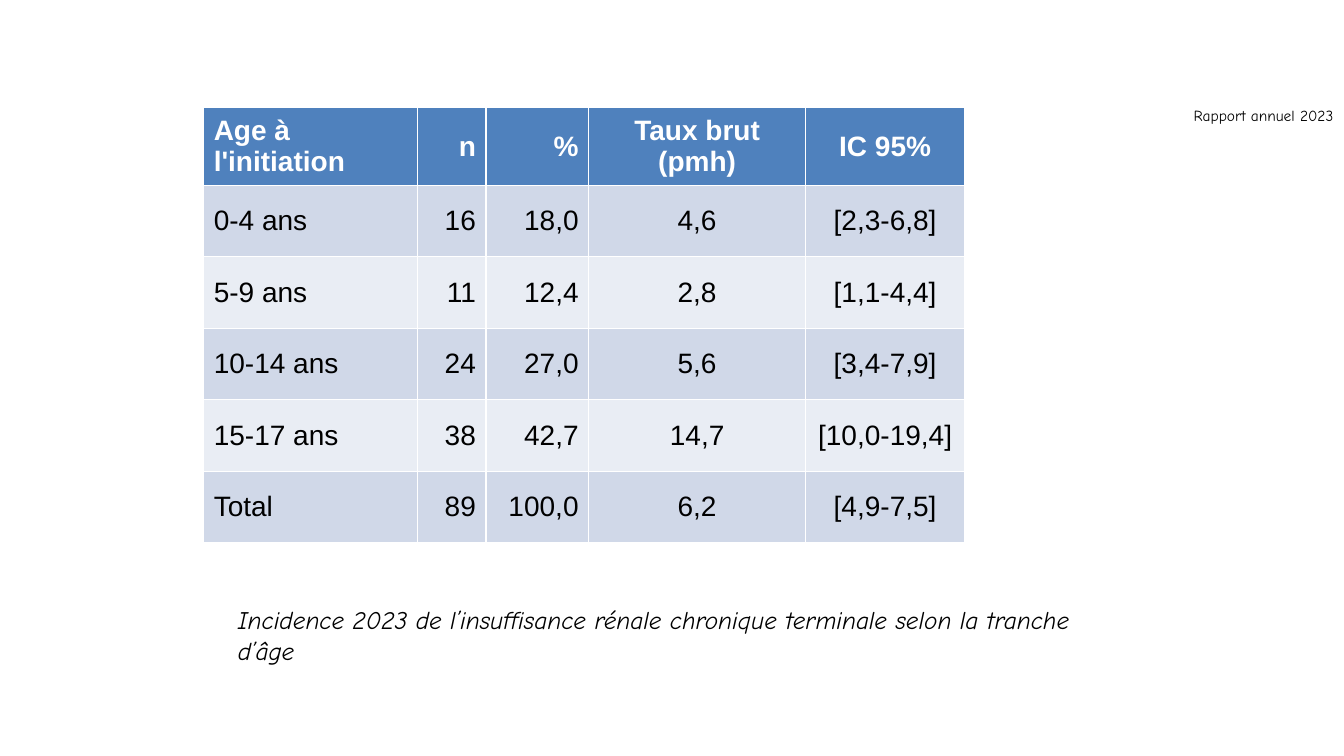
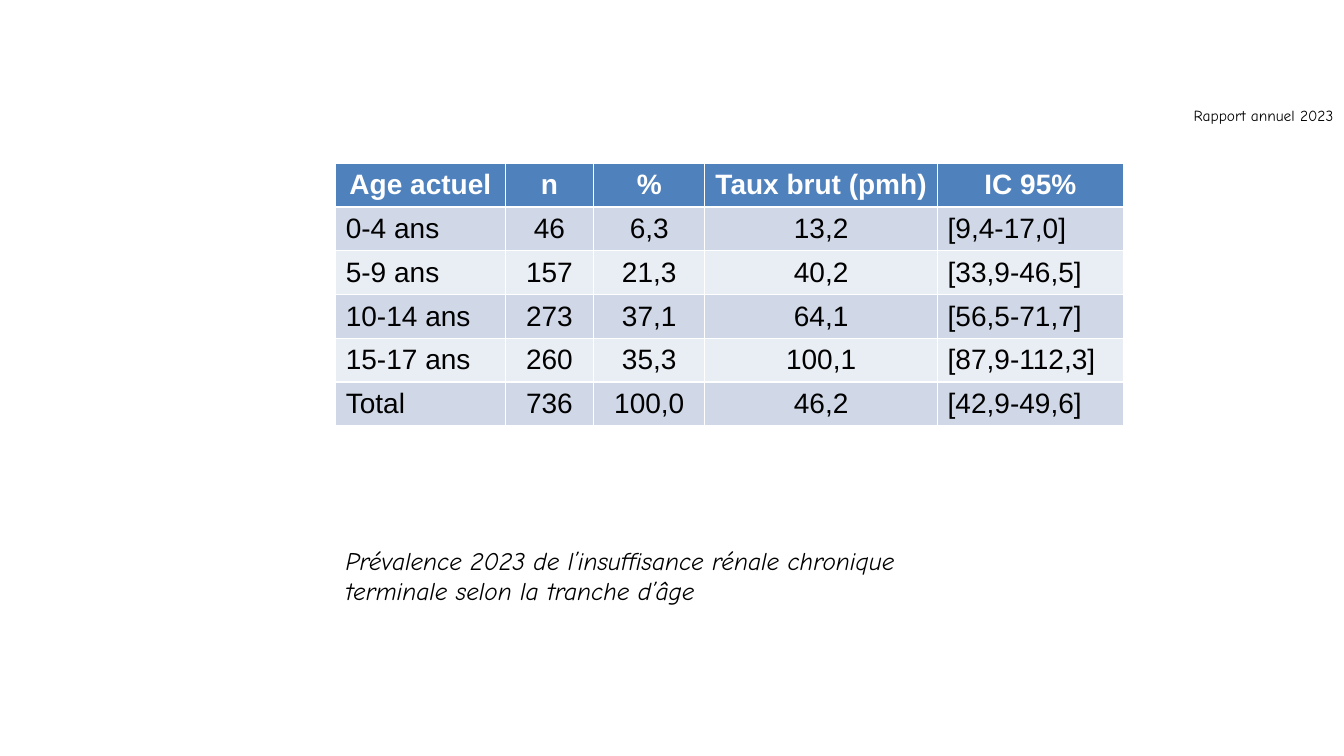
from dataclasses import dataclass

from pptx import Presentation
from pptx.dml.color import RGBColor
from pptx.enum.text import MSO_ANCHOR as Anchor, PP_ALIGN as Align
from pptx.slide import Slide
from pptx.util import Inches, Pt

WHITE = RGBColor(0xFF, 0xFF, 0xFF)
BLACK = RGBColor(0, 0, 0)
BLUE = RGBColor(0x4F, 0x81, 0xBD)
BANDS = (RGBColor(0xD0, 0xD8, 0xE8), RGBColor(0xE9, 0xED, 0xF4))
SANS, HAND = "Arial", "Comic Neue"
ALIGN = {"l": Align.LEFT, "c": Align.CENTER, "r": Align.RIGHT}


@dataclass
class Box:
    left: float
    top: float
    width: float
    height: float


@dataclass
class Grid:
    """A table; heads and body hold one alignment letter per column."""
    left: float
    top: float
    cols: list[float]
    row: float
    heads: str
    body: str
    rows: list[list[str]]


@dataclass
class Page:
    grid: Grid
    title: str
    box: Box


PAGES = [
    Page(
        Grid(2.02, 1.07, [2.12, 0.68, 1.02, 2.15, 1.58], 0.71, "lrrcc", "lrrcc", [
            ["Age à l'initiation", "n", "%", "Taux brut (pmh)", "IC 95%"],
            ["0-4 ans", "16", "18,0", "4,6", "[2,3-6,8]"],
            ["5-9 ans", "11", "12,4", "2,8", "[1,1-4,4]"],
            ["10-14 ans", "24", "27,0", "5,6", "[3,4-7,9]"],
            ["15-17 ans", "38", "42,7", "14,7", "[10,0-19,4]"],
            ["Total", "89", "100,0", "6,2", "[4,9-7,5]"],
        ]),
        "Incidence 2023 de l’insuffisance rénale chronique terminale selon la tranche d’âge",
        Box(2.26, 5.95, 8.82, 0.71),
    ),
    Page(
        Grid(3.33, 1.62, [1.68, 0.88, 1.1, 2.31, 1.84], 0.43, "ccccc", "lcccl", [
            ["Age actuel", "n", "%", "Taux brut (pmh)", "IC 95%"],
            ["0-4 ans", "46", "6,3", "13,2", "[9,4-17,0]"],
            ["5-9 ans", "157", "21,3", "40,2", "[33,9-46,5]"],
            ["10-14 ans", "273", "37,1", "64,1", "[56,5-71,7]"],
            ["15-17 ans", "260", "35,3", "100,1", "[87,9-112,3]"],
            ["Total", "736", "100,0", "46,2", "[42,9-49,6]"],
        ]),
        "Prévalence 2023 de l’insuffisance rénale chronique terminale selon la tranche d’âge",
        Box(3.33, 5.36, 6.67, 0.71),
    ),
]


def add_text(slide: Slide, box: Box, text: str, size: int,
             wrap: bool = True, slant: bool = False) -> None:
    frame = slide.shapes.add_textbox(
        Inches(box.left), Inches(box.top), Inches(box.width), Inches(box.height)
    ).text_frame
    frame.word_wrap = wrap
    para = frame.paragraphs[0]
    para.text = text
    font = para.font
    font.name, font.size, font.italic = HAND, Pt(size), slant
    font.color.rgb = BLACK


def add_grid(slide: Slide, grid: Grid) -> None:
    """Draw the table; its default style supplies the white rules."""
    count = len(grid.rows)
    table = slide.shapes.add_table(
        count, len(grid.cols), Inches(grid.left), Inches(grid.top),
        Inches(sum(grid.cols)), Inches(grid.row * count)
    ).table
    for col, width in zip(table.columns, grid.cols):
        col.width = Inches(width)
    for i, texts in enumerate(grid.rows):
        head = i == 0
        table.rows[i].height = Inches(grid.row)
        for j, text in enumerate(texts):
            cell = table.cell(i, j)
            cell.fill.solid()
            cell.fill.fore_color.rgb = BLUE if head else BANDS[(i - 1) % 2]
            cell.vertical_anchor = Anchor.MIDDLE
            para = cell.text_frame.paragraphs[0]
            para.text = text
            para.alignment = ALIGN[(grid.heads if head else grid.body)[j]]
            font = para.font
            font.name, font.size, font.bold = SANS, Pt(20), head
            font.color.rgb = WHITE if head else BLACK


def main() -> None:
    deck = Presentation()
    deck.slide_width, deck.slide_height = Inches(13.33), Inches(7.5)
    blank = deck.slide_layouts[6]
    for page in PAGES:
        slide = deck.slides.add_slide(blank)
        add_text(slide, Box(11.74, 1, 1.69, 0.29), "Rapport annuel 2023", 11, wrap=False)
        add_text(slide, page.box, page.title, 18, slant=True)
        add_grid(slide, page.grid)
    deck.save("out.pptx")


if __name__ == "__main__":
    main()
